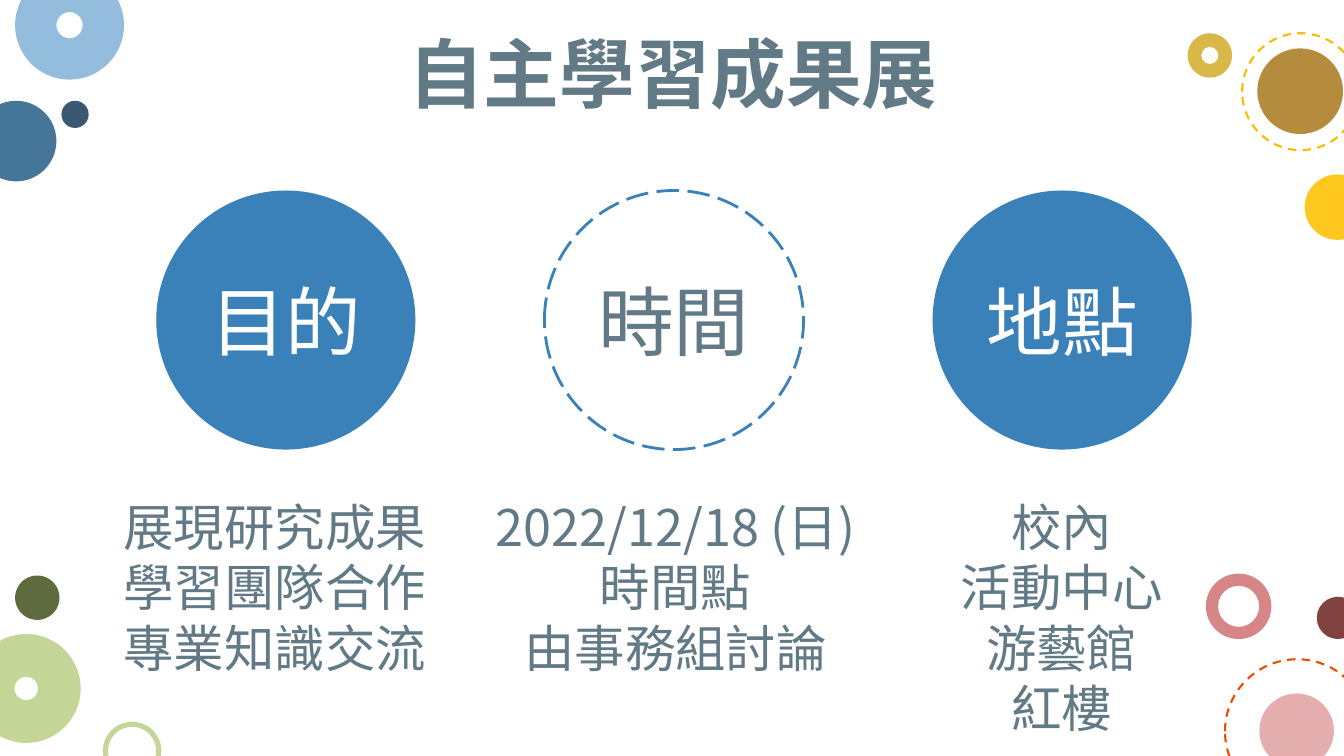
from dataclasses import dataclass

from lxml import etree
from pptx import Presentation
from pptx import util as u
from pptx.dml.color import RGBColor
from pptx.enum import dml, shapes, text
from pptx.oxml.ns import qn


@dataclass(frozen=True)
class Theme:
    font: str = "Noto Sans CJK SC"
    ink: str = "617A86"
    blue: str = "3A81BA"
    white: str = "FFFFFF"
    orange: str = "ED4A00"
    amber: str = "F8BB00"
    heading: int = 54
    body: int = 36
    bubble_alpha: int = 87


THEME = Theme()

# Corner bubbles: left, top, diameter, colour, ring thickness (None for a disc)
BUBBLES = [
    (-0.24, 1, 0.8, "2B618B", None),
    (11.96, 5.69, 0.65, "D07576", 0.186),
    (0.15, -0.29, 1.08, "85B4D9", 0.379),
    (0.61, 1, 0.27, "1D405D", None),
    (1.02, 7.16, 0.58, "BBD189", 0.088),
    (13.06, 5.92, 0.42, "712627", None),
    (-0.28, 6.29, 1.08, "BBD189", 0.392),
    (12.49, 6.88, 0.74, "E0A3A3", None),
    (11.78, 0.33, 0.44, "D5AD2F", 0.306),
    (12.47, 0.48, 0.85, "AB7A22", None),
    (12.94, 1.73, 0.65, "FFC000", None),
    (0.15, 5.71, 0.44, "465621", None),
]
# Dashed outlines: left, top, diameter, colour
OUTLINES = [
    (12.15, 6.54, 1.43, THEME.orange),
    (12.32, 0.33, 1.16, THEME.amber),
]
# Columns: heading, dashed circle?, details, box of the details
TOPICS = [
    ("目的", False, ["展現研究成果", "學習團隊合作", "專業知識交流"],
     (1.11, 4.87, 3.23, 1.92)),
    ("時間", True, ["2022/12/18 (日)", "時間點", "由事務組討論"],
     (4.74, 4.87, 3.92, 1.92)),
    ("地點", False, ["校內", "活動中心", "游藝館", "紅樓"],
     (9.42, 4.87, 2.22, 2.52)),
]


def rgb(colour):
    return RGBColor.from_string(colour)


def write(frame, lines, size, colour, align, bold=False):
    """Fill a text frame with one paragraph per line."""
    frame.word_wrap = True
    for number, line in enumerate(lines):
        paragraph = frame.paragraphs[0] if number == 0 else frame.add_paragraph()
        paragraph.alignment = align
        run = paragraph.add_run()
        run.text = line
        looks = {"name": THEME.font, "size": u.Pt(size), "bold": bold}
        for key, value in looks.items():
            setattr(run.font, key, value)
        run.font.color.rgb = rgb(colour)
        east_asian = etree.SubElement(run.font._element, qn("a:ea"))
        east_asian.set("typeface", THEME.font)


def add_circle(slide, box, fill=None, ring=None, alpha=None, line=None):
    """Place a disc or ring; line is (colour, width, dash)."""
    kind = shapes.MSO_SHAPE.DONUT if ring else shapes.MSO_SHAPE.OVAL
    circle = slide.shapes.add_shape(kind, *map(u.Inches, box))
    circle.shadow.inherit = False
    if ring:
        circle.adjustments[0] = ring
    if fill:
        circle.fill.solid()
        circle.fill.fore_color.rgb = rgb(fill)
        if alpha:
            colour = circle.fill._xPr.find(".//" + qn("a:srgbClr"))
            etree.SubElement(colour, qn("a:alpha")).set("val", str(alpha * 1000))
    else:
        circle.fill.background()
    if line:
        colour, width, dash = line
        circle.line.color.rgb = rgb(colour)
        circle.line.width = u.Pt(width)
        circle.line.dash_style = dash
    else:
        circle.line.fill.background()
    return circle


def add_text(slide, box, lines, size, align, bold=False):
    label = slide.shapes.add_textbox(*map(u.Inches, box))
    write(label.text_frame, lines, size, THEME.ink, align, bold)
    label.text_frame.auto_size = text.MSO_AUTO_SIZE.SHAPE_TO_FIT_TEXT


def add_decoration(slide):
    for left, top, size, colour, ring in BUBBLES:
        add_circle(slide, (left, top, size, size), colour, ring, THEME.bubble_alpha)
    for left, top, size, colour in OUTLINES:
        add_circle(slide, (left, top, size, size),
                   line=(colour, 1.5, dml.MSO_LINE.DASH))


def add_topic(slide, box, heading, dashed):
    fill, ink, line = THEME.blue, THEME.white, None
    if dashed:
        fill, ink = THEME.white, THEME.ink
        line = (THEME.blue, 2, dml.MSO_LINE.LONG_DASH)
    circle = add_circle(slide, box, fill, line=line)
    circle.text_frame.vertical_anchor = text.MSO_ANCHOR.MIDDLE
    write(circle.text_frame, [heading], THEME.heading, ink, text.PP_ALIGN.CENTER)


def add_topics(slide, left, top, diameter, pitch):
    for column, (heading, dashed, details, details_box) in enumerate(TOPICS):
        box = (left + column * pitch, top, diameter, diameter)
        add_topic(slide, box, heading, dashed)
        add_text(slide, details_box, details, THEME.body, text.PP_ALIGN.CENTER)


def main():
    deck = Presentation()
    deck.slide_width, deck.slide_height = u.Inches(13.33), u.Inches(7.5)
    slide = deck.slides.add_slide(deck.slide_layouts[6])
    add_decoration(slide)
    add_text(slide, (3.95, 0.22, 5.5, 1.01), ["自主學習成果展"],
             THEME.heading, text.PP_ALIGN.LEFT, bold=True)
    add_topics(slide, left=1.55, top=1.89, diameter=2.57, pitch=3.85)
    deck.save("out.pptx")


if __name__ == "__main__":
    main()
